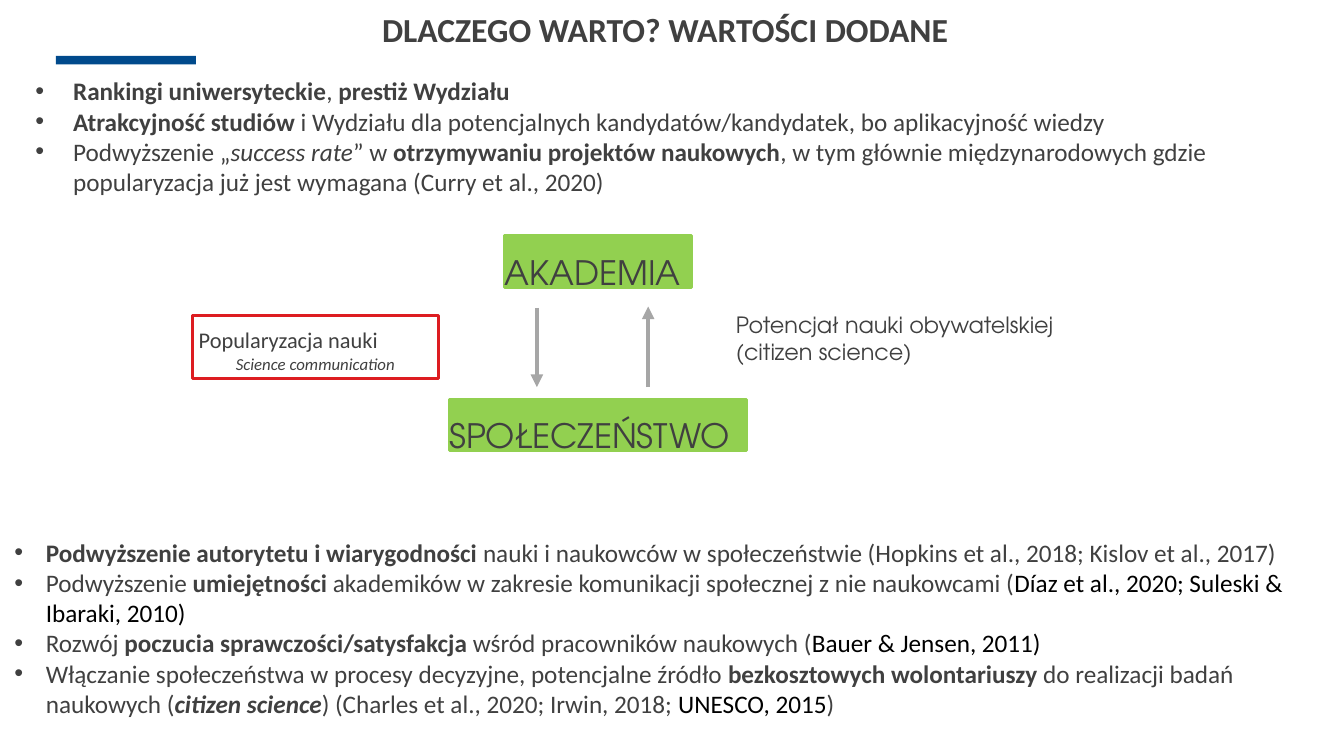
from dataclasses import dataclass

from lxml import etree
from pptx import Presentation
from pptx.dml.color import RGBColor
from pptx.enum.shapes import MSO_CONNECTOR as Connector, MSO_SHAPE as Preset
from pptx.enum.text import MSO_ANCHOR as Anchor, MSO_AUTO_SIZE as AutoSize, PP_ALIGN as Align
from pptx.oxml.ns import qn
from pptx.util import Pt


@dataclass(frozen=True)
class Theme:
    text: str = "404040"
    black: str = "000000"
    white: str = "FFFFFF"
    blue: str = "004A8C"
    green: str = "92D050"
    red: str = "DD1D21"
    grey: str = "A6A6A6"
    sans: str = "Calibri"
    geometric: str = "TeX Gyre Adventor"
    heading: int = 24
    body: int = 18
    label: int = 16
    small: int = 12


THEME = Theme()

BENEFITS = [
    [("Rankingi uniwersyteckie", "b"), (", ", ""), ("prestiż Wydziału", "b")],
    [("Atrakcyjność studiów", "b"),
     (" i Wydziału dla potencjalnych kandydatów/kandydatek, bo aplikacyjność wiedzy", "")],
    [("Podwyższenie „", ""), ("success rate", "i"), ("” w ", ""),
     ("otrzymywaniu projektów naukowych", "b"),
     (", w tym głównie międzynarodowych gdzie popularyzacja już jest wymagana "
      "(Curry et al., 2020)", "")],
]
ADDED_VALUES = [
    [("Podwyższenie autorytetu i wiarygodności ", "b"),
     ("nauki i naukowców w społeczeństwie (Hopkins et al., 2018; Kislov et al., 2017)", "")],
    [("Podwyższenie ", ""), ("umiejętności", "b"),
     (" akademików w zakresie komunikacji społecznej z nie naukowcami (", ""),
     ("Díaz et al., 2020; Suleski & Ibaraki, 2010)", "k")],
    [("Rozwój ", ""), ("poczucia sprawczości/satysfakcja", "b"),
     (" wśród pracowników naukowych (", ""), ("Bauer & Jensen, 2011)", "k")],
    [("Włączanie społeczeństwa w procesy decyzyjne, potencjalne źródło ", ""),
     ("bezkosztowych wolontariuszy", "b"), (" do realizacji badań naukowych (", ""),
     ("citizen science", "bi"), (") (Charles et al., 2020; Irwin, 2018; ", ""),
     ("UNESCO, 2015", "k"), (")", "")],
]


def add_run(paragraph, text, size, font=THEME.sans, style=""):
    """Append a run; style letters are b (bold), i (italic) and k (black)."""
    run = paragraph.add_run()
    run.text = text
    run.font.size = Pt(size)
    run.font.name = font
    run.font.bold = "b" in style
    run.font.italic = "i" in style
    run.font.color.rgb = RGBColor.from_string(THEME.black if "k" in style else THEME.text)


def place(shape, box):
    shape.left, shape.top, shape.width, shape.height = (Pt(length) for length in box)


def set_frame(frame, inset=None):
    frame.word_wrap = True
    frame.auto_size = AutoSize.NONE
    frame.vertical_anchor = Anchor.TOP
    if inset is not None:
        frame.margin_left = frame.margin_right = Pt(inset)
        frame.margin_top = frame.margin_bottom = Pt(inset)


def add_box(slide, box, fill, line=None):
    shape = slide.shapes.add_shape(Preset.RECTANGLE, *(Pt(length) for length in box))
    shape.shadow.inherit = False
    shape.fill.solid()
    shape.fill.fore_color.rgb = RGBColor.from_string(fill)
    if line:
        shape.line.color.rgb = RGBColor.from_string(line)
        shape.line.width = Pt(2)
    else:
        shape.line.fill.background()
    set_frame(shape.text_frame, 0)
    return shape


def spaced_paragraph(paragraph, align=Align.LEFT, spacing=1.4):
    paragraph.alignment = align
    paragraph.line_spacing = spacing
    return paragraph


def add_heading(slide, box):
    left, top, width, height = box
    add_box(slide, (left + 5, top + 33.5, 100, 6), THEME.blue)
    title = slide.shapes.title
    place(title, box)
    set_frame(title.text_frame, 0)
    title.text_frame.vertical_anchor = Anchor.MIDDLE
    paragraph = title.text_frame.paragraphs[0]
    paragraph.alignment = Align.CENTER
    add_run(paragraph, "DLACZEGO WARTO? WARTOŚCI DODANE", THEME.heading, style="b")


def fill_list(placeholder, box, items, indent):
    place(placeholder, box)
    frame = placeholder.text_frame
    set_frame(frame)
    for index, item in enumerate(items):
        paragraph = frame.add_paragraph() if index else frame.paragraphs[0]
        paragraph.space_before = Pt(0)
        properties = paragraph._p.get_or_add_pPr()
        properties.set("marL", str(Pt(indent)))
        properties.set("indent", str(-Pt(indent)))
        etree.SubElement(properties, qn("a:buFont"), typeface="Arial")
        etree.SubElement(properties, qn("a:buChar"), char="•")
        for text, style in item:
            add_run(paragraph, text, THEME.body, style=style)


def add_arrow(slide, x, start, end):
    arrow = slide.shapes.add_connector(Connector.STRAIGHT, Pt(x), Pt(start), Pt(x), Pt(end))
    arrow.line.color.rgb = RGBColor.from_string(THEME.grey)
    arrow.line.width = Pt(3)
    etree.SubElement(arrow.line._get_or_add_ln(), qn("a:tailEnd"), type="triangle")
    etree.SubElement(arrow._element.spPr, qn("a:effectLst"))


def add_group_label(slide, box, text):
    shape = add_box(slide, box, THEME.green, THEME.green)
    paragraph = spaced_paragraph(shape.text_frame.paragraphs[0])
    add_run(paragraph, text, THEME.heading, THEME.geometric)


def add_popularisation(slide, box):
    frame = add_box(slide, box, THEME.white, THEME.red).text_frame
    paragraph = spaced_paragraph(frame.paragraphs[0])
    add_run(paragraph, " ", THEME.label, THEME.geometric)
    add_run(paragraph, "Popularyzacja nauki", THEME.label)
    paragraph = spaced_paragraph(frame.add_paragraph(), Align.CENTER, 1.0)
    add_run(paragraph, "Science communication", THEME.small, style="i")


def add_citizen_science(slide, box):
    frame = slide.shapes.add_textbox(*(Pt(length) for length in box)).text_frame
    set_frame(frame)
    add_run(frame.paragraphs[0], "Potencjał nauki obywatelskiej (citizen science)",
            THEME.label, THEME.geometric)


def add_exchange(slide, box):
    """Two-way exchange between the academy and society."""
    left, top, width, height = box
    add_popularisation(slide, (left, top + 57, 175.5, 45))
    add_group_label(slide, (left + 183.5, top + 116.6, 212, 37), "SPOŁECZEŃSTWO")
    arrow_top, arrow_bottom = top + 51.5, top + 108
    add_arrow(slide, left + 246, arrow_top, arrow_bottom)
    add_arrow(slide, left + 325.5, arrow_bottom, arrow_top - 1)
    add_citizen_science(slide, (left + 381, top + 50.5, width - 381, 47))
    add_group_label(slide, (left + 223, top, 133.5, 37), "AKADEMIA")


def build_slide(presentation):
    slide = presentation.slides.add_slide(presentation.slide_layouts.get_by_name("Two Content"))
    benefits, added_values = list(slide.placeholders)[1:3]
    add_heading(slide, (35, 6.5, 880, 29))
    fill_list(benefits, (18, 50.4, 918, 94), BENEFITS, 27)
    add_exchange(slide, (137.5, 168.5, 675.5, 154))
    fill_list(added_values, (3, 380, 950, 138), ADDED_VALUES, 22.5)


def main():
    presentation = Presentation()
    presentation.slide_width, presentation.slide_height = Pt(960), Pt(540)
    build_slide(presentation)
    presentation.save("out.pptx")


if __name__ == "__main__":
    main()
